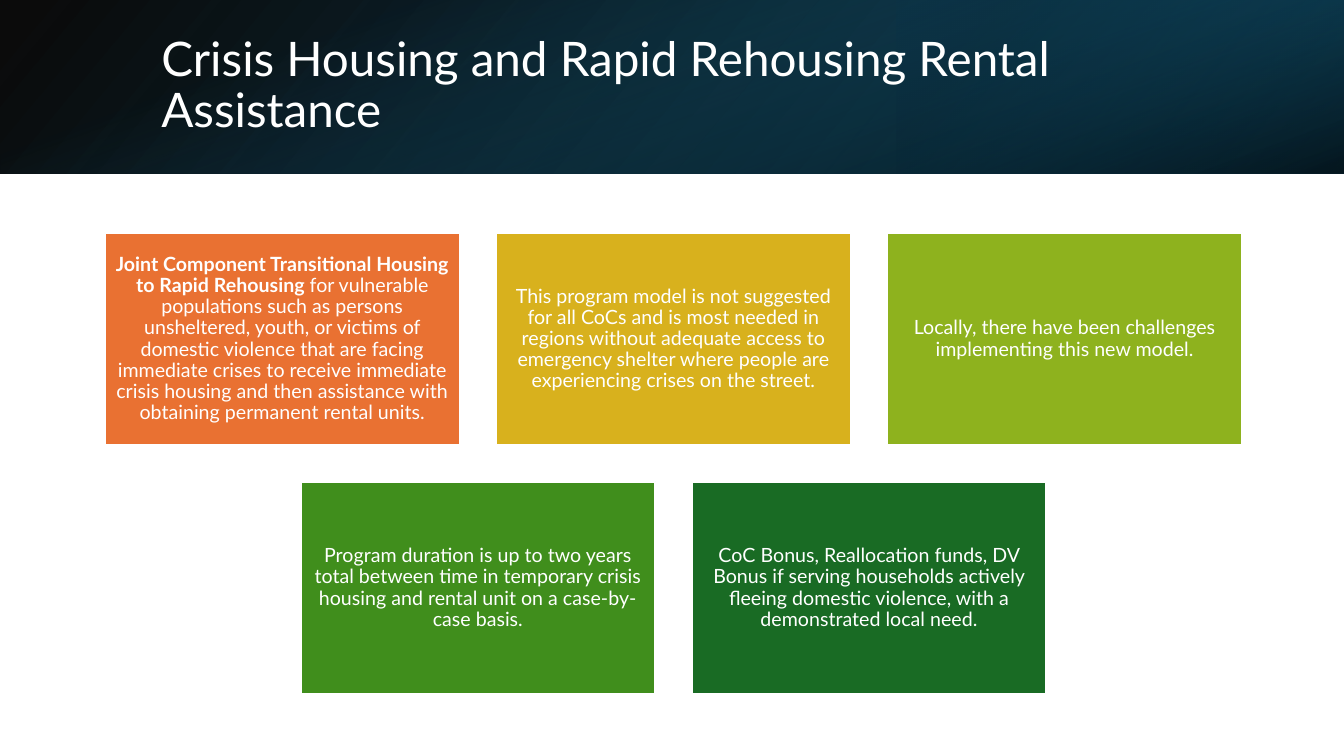
from lxml import etree
from pptx import Presentation
from pptx.dml.color import RGBColor
from pptx.enum.shapes import MSO_SHAPE
from pptx.enum.text import MSO_ANCHOR, MSO_AUTO_SIZE, PP_ALIGN
from pptx.oxml.ns import qn
from pptx.util import Inches, Pt

RECTANGLE = MSO_SHAPE.RECTANGLE
MIDDLE = MSO_ANCHOR.MIDDLE
NO_FIT = MSO_AUTO_SIZE.NONE
LEFT, CENTER = PP_ALIGN.LEFT, PP_ALIGN.CENTER

# Content
TITLE = "Crisis Housing and Rapid Rehousing Rental Assistance"
CARD_ROWS = [
    [
        ("orange", [
            ("Joint Component Transitional Housing to Rapid Rehousing ", True),
            ("for vulnerable populations such as persons unsheltered, youth, or victims of "
             "domestic violence that are facing immediate crises to receive immediate crisis "
             "housing and then assistance with obtaining permanent rental units.", False)]),
        ("gold", [
            ("This program model is not suggested for all CoCs and is most needed in regions "
             "without adequate access to emergency shelter where people are experiencing "
             "crises on the street.", False)]),
        ("lime", [
            ("Locally, there have been challenges implementing this new model.", False)]),
    ],
    [
        ("green", [
            ("Program duration is up to two years total between time in temporary crisis "
             "housing and rental unit on a case-by-case basis.", False)]),
        ("forest", [
            ("CoC Bonus, Reallocation funds, DV Bonus if serving households actively fleeing "
             "domestic violence, with a demonstrated local need.", False)]),
    ],
]
COLORS = {
    "white": "FFFFFF", "black": "000000", "teal": "156082",
    "mid_teal": "104862", "deep_teal": "0B3041",
    "orange": "E97132", "gold": "D8B11D", "lime": "8EB21E",
    "green": "408E1C", "forest": "196B24",
}

# Layout
SLIDE_W, SLIDE_H, BANNER_H = 13.33, 7.5, 1.72
CARD_W, CARD_H, CARD_GAP = 3.52, 2.11, 0.36
CARDS_CENTER, CARDS_TOP = 6.68, 2.31
FONT = "Lato"

# Banner layers: box, rotation, flipped, angle, stops (position, color, opacity)
BANNER_LAYERS = [
    ((0, 0, SLIDE_W, BANNER_H), 0, True, 140,
     [(0, "black", 96), (100, "mid_teal", 100)]),
    ((8.89, 0, 4.44, BANNER_H), 180, True, 320,
     [(19, "deep_teal", 68), (100, "teal", 79)]),
    (((SLIDE_W - BANNER_H) / 2, (BANNER_H - SLIDE_W) / 2, BANNER_H, SLIDE_W), 90, False, 340,
     [(23, "teal", 0), (99, "black", 74)]),
]


def rgb(name):
    return RGBColor.from_string(COLORS[name])


def apply_format(target, values):
    for name, value in values.items():
        setattr(target, name, value)


def add_rectangle(box):
    rectangle = slide.shapes.add_shape(RECTANGLE, *map(Inches, box))
    rectangle.shadow.inherit = False
    return rectangle


def set_gradient(rectangle, angle, stops):
    properties = rectangle._element.spPr
    gradient = etree.Element(qn("a:gradFill"))
    stop_list = etree.SubElement(gradient, qn("a:gsLst"))
    for position, color, opacity in stops:
        stop = etree.SubElement(stop_list, qn("a:gs"), pos=str(position * 1000))
        tint = etree.SubElement(stop, qn("a:srgbClr"), val=COLORS[color])
        etree.SubElement(tint, qn("a:alpha"), val=str(opacity * 1000))
    etree.SubElement(gradient, qn("a:lin"), ang=str(angle * 60000), scaled="0")
    properties.find(qn("a:prstGeom")).addnext(gradient)


def write_text(frame, runs, size, align):
    paragraph = frame.paragraphs[0]
    apply_format(paragraph, {"alignment": align, "line_spacing": 0.9})
    for text, bold in runs:
        run = paragraph.add_run()
        run.text = text
        apply_format(run.font, {"name": FONT, "size": Pt(size), "bold": bold})
        run.font.color.rgb = rgb("white")


prs = Presentation()
prs.slide_width, prs.slide_height = Inches(SLIDE_W), Inches(SLIDE_H)
slide = prs.slides.add_slide(prs.slide_layouts[5])

# Banner
for box, rotation, flipped, angle, stops in BANNER_LAYERS:
    layer = add_rectangle(box)
    layer.rotation = rotation
    layer.line.fill.background()
    if flipped:
        layer._element.spPr.find(qn("a:xfrm")).set("flipH", "1")
    set_gradient(layer, angle, stops)

# Title, moved in front of the banner
title = slide.shapes.title
apply_format(title, {"left": Inches(1.5), "top": Inches(0.38),
                     "width": Inches(10.98), "height": Inches(0.96)})
apply_format(title.text_frame, {"vertical_anchor": MIDDLE, "word_wrap": True,
                                "auto_size": NO_FIT})
write_text(title.text_frame, [(TITLE, False)], 34, LEFT)
title._element.getparent().append(title._element)

# Cards, each row centered
for row_index, cards in enumerate(CARD_ROWS):
    row_width = len(cards) * (CARD_W + CARD_GAP) - CARD_GAP
    row_left = CARDS_CENTER - row_width / 2
    top = CARDS_TOP + row_index * (CARD_H + CARD_GAP)
    for column, (color, runs) in enumerate(cards):
        left = row_left + column * (CARD_W + CARD_GAP)
        card = add_rectangle((left, top, CARD_W, CARD_H))
        card.fill.solid()
        card.fill.fore_color.rgb = rgb(color)
        card.line.color.rgb = rgb("white")
        card.line.width = Pt(1.5)
        inset = Inches(0.06)
        apply_format(card.text_frame, {
            "margin_left": inset, "margin_right": inset, "margin_top": inset,
            "margin_bottom": inset, "vertical_anchor": MIDDLE, "word_wrap": True})
        write_text(card.text_frame, runs, 14, CENTER)

prs.save("out.pptx")
